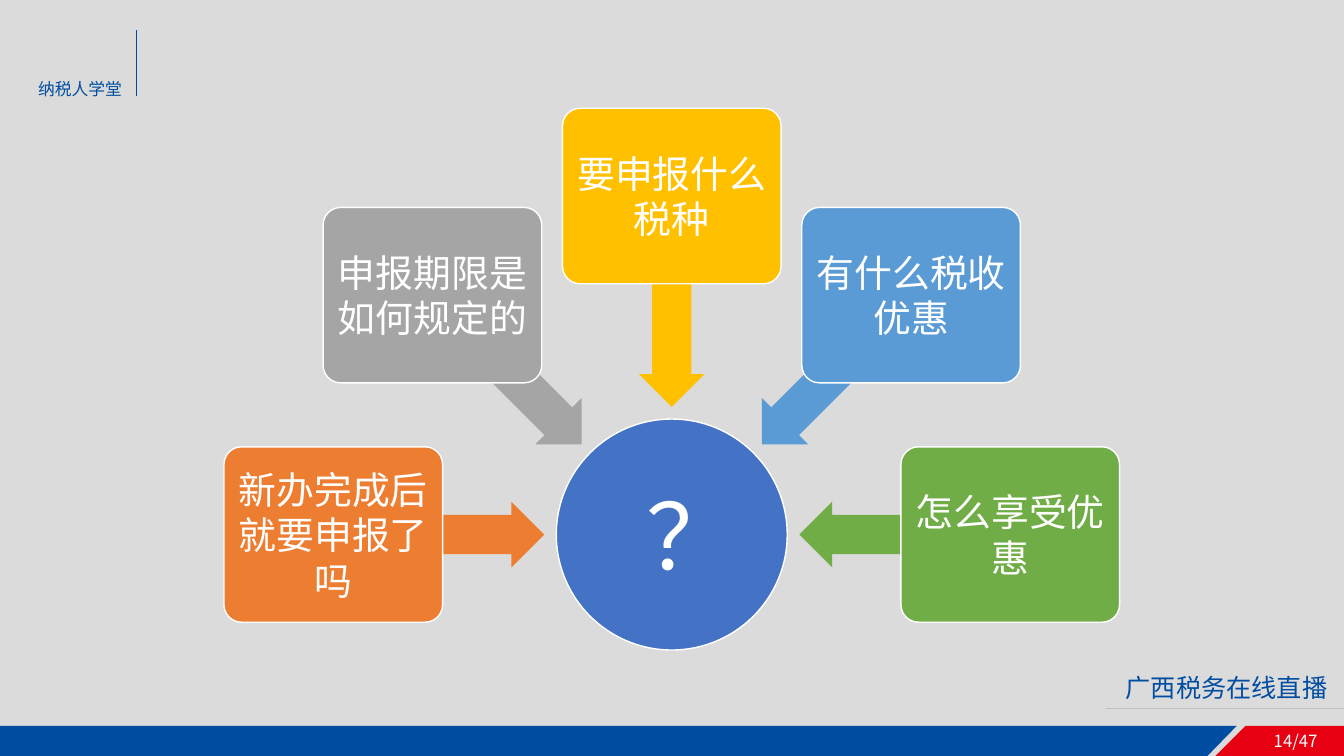
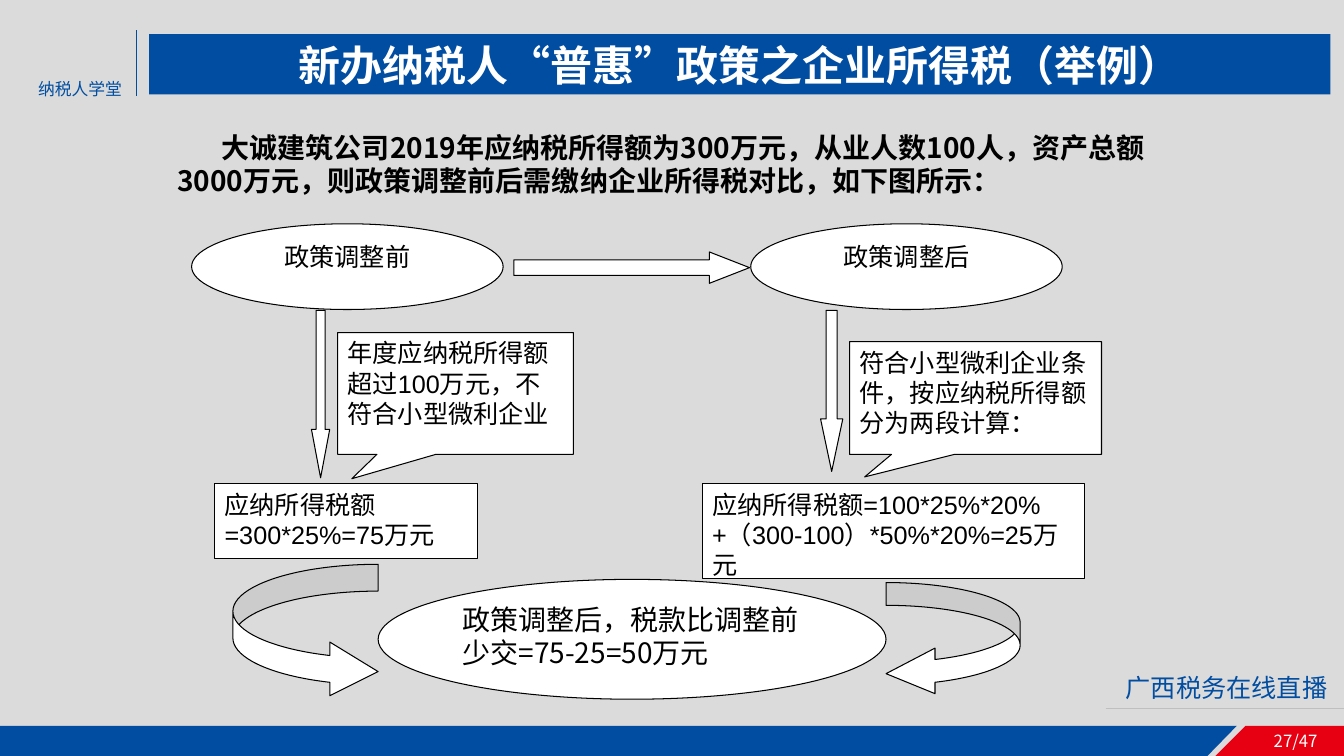
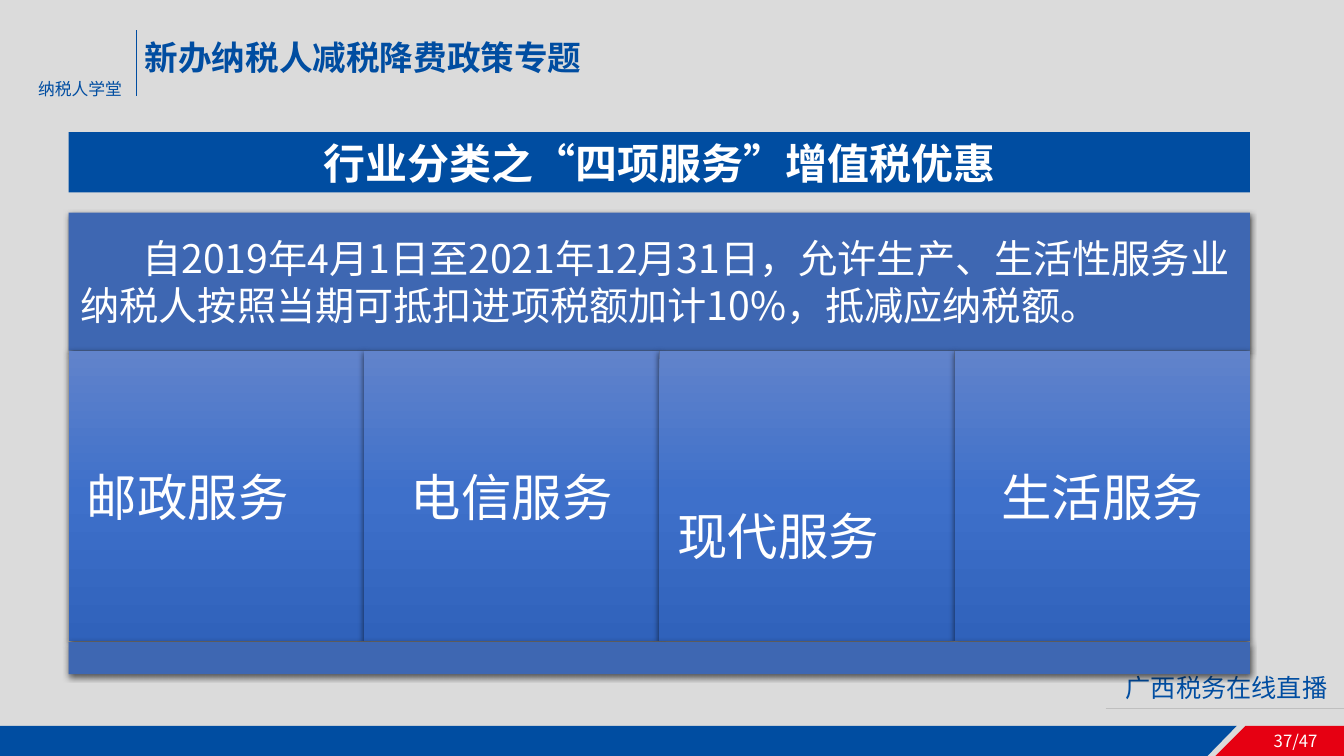
import math

from pptx import Presentation
from pptx.dml.color import RGBColor
from pptx.enum import shapes, text
from pptx.oxml import ns, parse_xml
from pptx.util import Cm, Pt

FONT = "Noto Sans CJK SC"
BLUE = RGBColor(0x00, 0x4D, 0xA1)
RED = RGBColor(0xE6, 0x00, 0x12)
BACKGROUND = RGBColor(0xDB, 0xDB, 0xDB)
RULE_GRAY = RGBColor(0xBF, 0xBF, 0xBF)
WHITE = RGBColor(0xFF, 0xFF, 0xFF)
BLACK = RGBColor(0x00, 0x00, 0x00)
HUB_BLUE = RGBColor(0x44, 0x72, 0xC4)
ORANGE = RGBColor(0xED, 0x7D, 0x31)
GRAY = RGBColor(0xA5, 0xA5, 0xA5)
GOLD = RGBColor(0xFF, 0xC0, 0x00)
SKY = RGBColor(0x5B, 0x9B, 0xD5)
GREEN = RGBColor(0x70, 0xAD, 0x47)
PANEL_BLUE = RGBColor(0x3E, 0x67, 0xB2)

KIND = shapes.MSO_SHAPE
LEFT, CENTER = text.PP_ALIGN.LEFT, text.PP_ALIGN.CENTER
TOP, MIDDLE = text.MSO_ANCHOR.TOP, text.MSO_ANCHOR.MIDDLE
NAMESPACE = ns.nsdecls("a")
SHADOW = (f'<a:effectLst {NAMESPACE}><a:outerShdw blurRad="57150" dist="19050" dir="5400000" '
          'algn="ctr" rotWithShape="0"><a:srgbClr val="000000"><a:alpha val="63000"/>'
          '</a:srgbClr></a:outerShdw></a:effectLst>')
TILE_GRADIENT = (f'<a:gradFill {NAMESPACE} rotWithShape="1"><a:gsLst>'
                 '<a:gs pos="0"><a:srgbClr val="6183CB"/></a:gs>'
                 '<a:gs pos="50000"><a:srgbClr val="3E70CA"/></a:gs>'
                 '<a:gs pos="100000"><a:srgbClr val="3062BB"/></a:gs>'
                 '</a:gsLst><a:lin ang="5400000" scaled="0"/></a:gradFill>')


def write(shape, words, size=18, color=BLACK, bold=False, font=FONT, align=LEFT,
          anchor=TOP, insets=(0.25, 0.13, 0.25, 0.13), indent=0):
    """Put one formatted paragraph in a shape; insets are left, top, right, bottom in cm."""
    frame = shape.text_frame
    frame.word_wrap = True
    frame.vertical_anchor = anchor
    frame.margin_left, frame.margin_top, frame.margin_right, frame.margin_bottom = map(Cm, insets)
    paragraph = frame.paragraphs[0]
    paragraph.alignment = align
    if indent:
        paragraph._p.get_or_add_pPr().set("indent", str(Cm(indent)))
    run = paragraph.add_run()
    run.text = words
    run.font.name, run.font.size, run.font.bold = font, Pt(size), bold
    run.font.color.rgb = color
    run.font._element.find(ns.qn("a:latin")).addnext(
        parse_xml(f'<a:ea {NAMESPACE} typeface="{FONT}"/>'))


def draw(slide, kind, box, fill=WHITE, line=None, width=0.75, adjust=(), shadow=False):
    """Add a preset shape, or a text box when kind is None; box is in cm."""
    if kind is None:
        return slide.shapes.add_textbox(*map(Cm, box))
    shape = slide.shapes.add_shape(kind, *map(Cm, box))
    shape.fill.solid()
    shape.fill.fore_color.rgb = fill
    if line is None:
        shape.line.fill.background()
    else:
        shape.line.color.rgb = line
        shape.line.width = Pt(width)
    for index, value in enumerate(adjust):
        shape.adjustments[index] = value
    if shadow:
        shape._element.spPr.append(parse_xml(SHADOW))
    else:
        shape.shadow.inherit = False
    return shape


presentation = Presentation()
presentation.slide_width, presentation.slide_height = Cm(33.87), Cm(19.05)

# Shared frame: background, bottom bands, rules and labels
slides = []
for number in (14, 27, 37):
    slide = presentation.slides.add_slide(presentation.slide_layouts[6])
    slides.append(slide)
    slide.background.fill.solid()
    slide.background.fill.fore_color.rgb = BACKGROUND
    for color, top_left, top_right, bottom_right, bottom_left in (
            (BLUE, 0, 31.17, 30.38, 0), (RED, 31.39, 33.87, 33.87, 30.58)):
        builder = slide.shapes.build_freeform(Cm(top_left), Cm(18.29))
        builder.add_line_segments([(Cm(top_right), Cm(18.29)), (Cm(bottom_right), Cm(19.1)),
                                   (Cm(bottom_left), Cm(19.1))])
        band = builder.convert_to_shape()
        band.fill.solid()
        band.fill.fore_color.rgb = color
        band.line.fill.background()
        band.shadow.inherit = False
    for color, ends in ((BLUE, (3.43, 0.76, 3.43, 2.41)),
                        (RULE_GRAY, (27.86, 17.86, 33.87, 17.86))):
        rule = slide.shapes.add_connector(shapes.MSO_CONNECTOR.STRAIGHT, *map(Cm, ends))
        rule.line.color.rgb = color
        rule.line.width = Pt(0.5)
        rule._element.spPr.append(parse_xml(f"<a:effectLst {NAMESPACE}/>"))
    for words, box, size, color in (
            (f"{number}/47", (31.85, 18.29, 1.75, 0.76), 12, WHITE),
            ("纳税人学堂", (0.71, 1.85, 2.74, 0.76), 12, BLUE),
            ("广西税务在线直播", (28.12, 16.81, 5.75, 1.02), 18, BLUE)):
        write(draw(slide, None, box), words, size=size, color=color)

question_slide, example_slide, service_slide = slides

# Questions around a hub
hub_x, hub_y, hub_size = 16.93, 13.47, 5.82
node_width, node_height, node_radius = 5.51, 4.42, 8.53
arrow_width, arrow_height, arrow_radius = 5.31, 1.65, 5.87
hub = draw(question_slide, KIND.OVAL,
           (hub_x - hub_size / 2, hub_y - hub_size / 2, hub_size, hub_size),
           HUB_BLUE, WHITE, 1)
write(hub, "？", size=65, color=WHITE, align=CENTER, anchor=MIDDLE,
      insets=(1.13, 0.13, 0.13, 0.13))
questions = (("新办完成后就要申报了吗", ORANGE), ("申报期限是如何规定的", GRAY),
             ("要申报什么税种", GOLD), ("有什么税收优惠", SKY), ("怎么享受优惠", GREEN))
for index, (words, color) in enumerate(questions):
    angle = 180 + 45 * index
    across, down = math.cos(math.radians(angle)), math.sin(math.radians(angle))
    arrow = draw(question_slide, KIND.LEFT_ARROW,
                 (hub_x + arrow_radius * across - arrow_width / 2,
                  hub_y + arrow_radius * down - arrow_height / 2, arrow_width, arrow_height),
                 color, adjust=(0.6, 0.5))
    arrow.rotation = angle % 360
    node = draw(question_slide, KIND.ROUNDED_RECTANGLE,
                (hub_x + node_radius * across - node_width / 2,
                 hub_y + node_radius * down - node_height / 2, node_width, node_height),
                color, WHITE, 1, adjust=(0.1,))
    write(node, words, size=27, color=WHITE, align=CENTER, anchor=MIDDLE, insets=(0.15,) * 4)

# Title bands
for slide, left, top, words in (
        (example_slide, 3.76, 0.86, "新办纳税人“普惠”政策之企业所得税（举例）"),
        (service_slide, 1.73, 3.33, "行业分类之“四项服务”增值税优惠")):
    write(draw(slide, KIND.RECTANGLE, (left, top, 29.77, 1.52), BLUE), words,
          size=30, color=WHITE, bold=True, align=CENTER, anchor=MIDDLE)

# Worked example: introduction and arrows
write(draw(example_slide, None, (4.22, 3.15, 25.43, 1.96)),
      "大诚建筑公司2019年应纳税所得额为300万元，从业人数100人，资产总额3000万元，"
      "则政策调整前后需缴纳企业所得税对比，如下图所示：",
      size=20, bold=True, indent=1.12)
for kind, box, adjust in (
        (KIND.RIGHT_ARROW, (12.95, 6.35, 5.94, 0.79), (0.5, 1.28)),
        (KIND.DOWN_ARROW, (7.85, 7.82, 0.46, 4.22), (0.5, 2.65)),
        (KIND.DOWN_ARROW, (20.68, 7.82, 0.56, 4.06), (0.5, 2.36)),
        (KIND.CURVED_RIGHT_ARROW, (5.87, 14.22, 3.66, 3.38), (0.2, 0.4, 0.36)),
        (KIND.CURVED_LEFT_ARROW, (22.33, 14.68, 3.38, 2.87), (0.2, 0.4, 0.43))):
    draw(example_slide, kind, box, line=BLACK, adjust=adjust)

# Worked example: stages, conditions, results and conclusion
callout = (-0.44, 0.7)
for kind, box, adjust, words, style in (
        (KIND.OVAL, (4.83, 5.64, 7.85, 2.16), (), "政策调整前", {"align": CENTER}),
        (KIND.OVAL, (18.92, 5.64, 7.85, 2.16), (), "政策调整后", {"align": CENTER}),
        (KIND.RECTANGULAR_CALLOUT, (8.51, 8.38, 5.94, 3.07), callout,
         "年度应纳税所得额超过100万元，不符合小型微利企业", {}),
        (KIND.RECTANGULAR_CALLOUT, (21.41, 8.61, 6.35, 2.84), callout,
         "符合小型微利企业条件，按应纳税所得额分为两段计算：", {}),
        (KIND.RECTANGLE, (5.41, 12.19, 6.63, 1.88), (), "应纳所得税额=300*25%=75万元", {}),
        (KIND.RECTANGLE, (17.7, 12.19, 9.63, 2.39), (),
         "应纳所得税额=100*25%*20%+（300-100）*50%*20%=25万元", {}),
        (KIND.OVAL, (9.53, 14.6, 12.8, 3.02), (), "政策调整后，税款比调整前少交=75-25=50万元",
         {"size": 20, "font": FONT})):
    shape = draw(example_slide, kind, box, line=BLACK, adjust=adjust)
    write(shape, words, **{"font": "Arial", **style})

# Four services: heading and policy panel
write(draw(service_slide, None, (3.4, 0.81, 19.1, 1.27)), "新办纳税人减税降费政策专题",
      size=24, color=BLUE, bold=True)
panel_left, panel_width = 1.73, 29.77
panel = draw(service_slide, KIND.RECTANGLE, (panel_left, 5.36, panel_width, 3.48),
             PANEL_BLUE, shadow=True)
write(panel, "自2019年4月1日至2021年12月31日，允许生产、生活性服务业纳税人按照当期可抵扣进项税额"
      "加计10%，抵减应纳税额。", size=28, color=WHITE, anchor=MIDDLE, insets=(0.3,) * 4, indent=1.56)

# Four services: tiles and base strip
tiles = (("邮政服务", LEFT, 0.46), ("电信服务", CENTER, 0.46),
         ("现代服务", LEFT, 2.46), ("生活服务", CENTER, 0.46))
tile_width = panel_width / len(tiles)
for index, (words, align, top_inset) in enumerate(tiles):
    tile = draw(service_slide, KIND.RECTANGLE,
                (panel_left + index * tile_width, 8.84, tile_width, 7.32), shadow=True)
    properties = tile._element.spPr
    properties.replace(properties.find(ns.qn("a:solidFill")), parse_xml(TILE_GRADIENT))
    write(tile, words, size=36, color=WHITE, align=align, anchor=MIDDLE,
          insets=(0.46, top_inset, 0.46, 0.46))
draw(service_slide, KIND.RECTANGLE, (panel_left, 16.18, panel_width, 0.81),
     PANEL_BLUE, shadow=True)

presentation.save("out.pptx")
